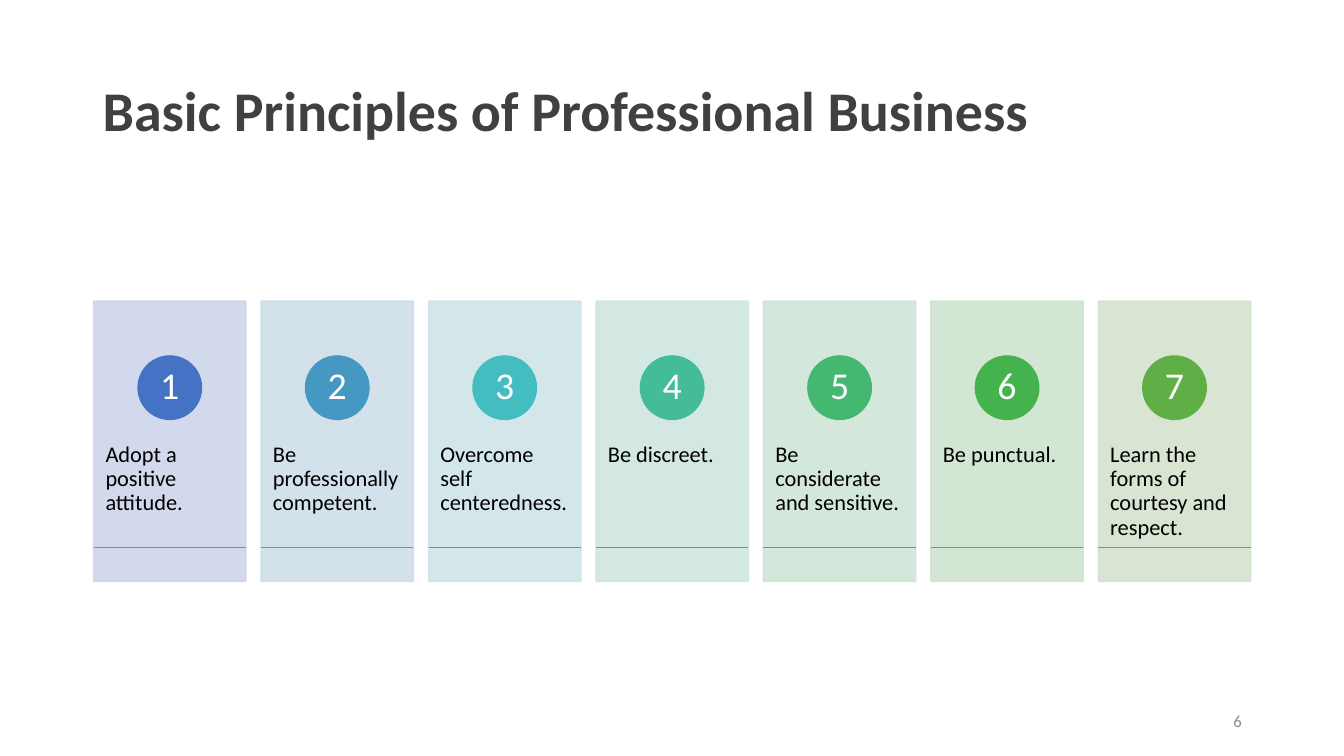
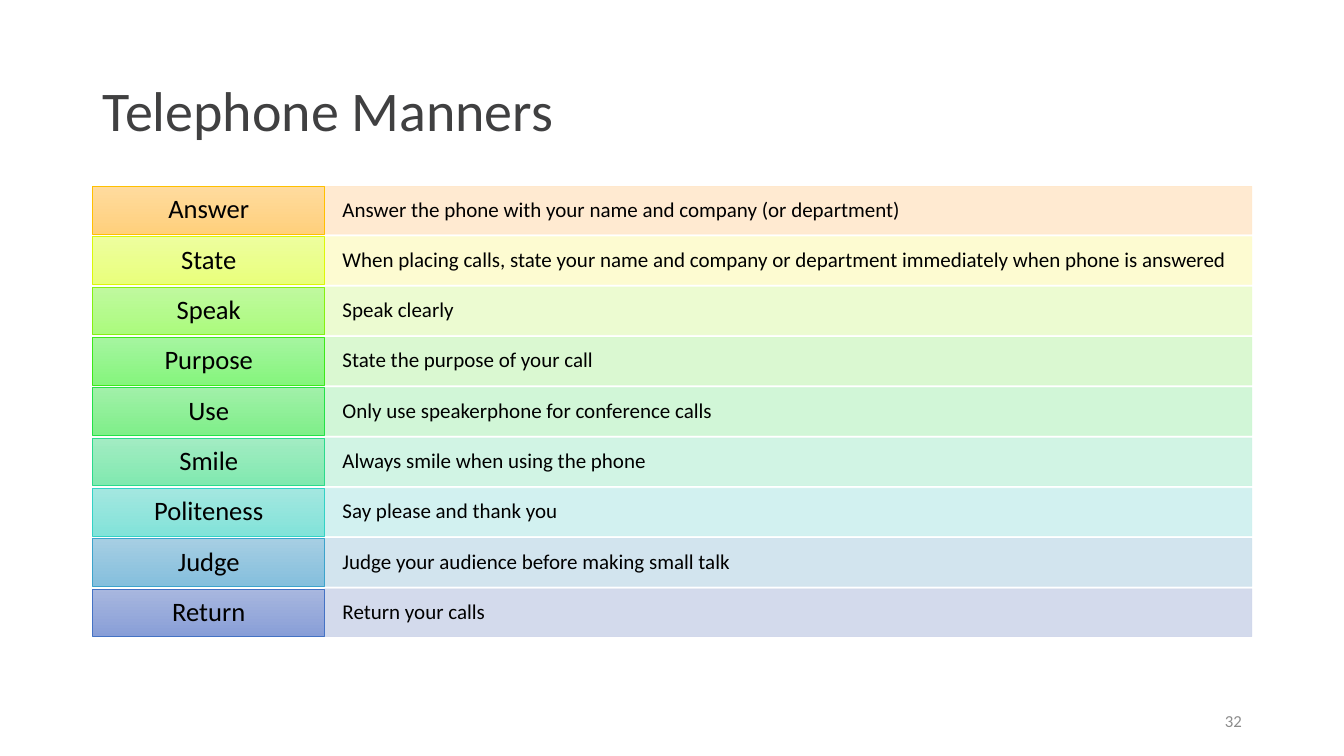
from dataclasses import dataclass

from lxml import etree
from pptx import Presentation
from pptx.dml.color import RGBColor
from pptx.enum.shapes import MSO_CONNECTOR, MSO_SHAPE
from pptx.enum.text import MSO_ANCHOR, PP_ALIGN
from pptx.oxml.ns import qn
from pptx.util import Cm, Pt

RECT, OVAL = MSO_SHAPE.RECTANGLE, MSO_SHAPE.OVAL
LINE = MSO_CONNECTOR.STRAIGHT
TOP, MID = MSO_ANCHOR.TOP, MSO_ANCHOR.MIDDLE
LEFT, MIDDLE, RIGHT = PP_ALIGN.LEFT, PP_ALIGN.CENTER, PP_ALIGN.RIGHT


@dataclass(frozen=True)
class Theme:
    face: str = "Calibri"
    title: str = "404041"
    faint: str = "8C8C8C"
    text: str = "000000"
    light: str = "FFFFFF"
    rule: str = "7F8F8F"
    head_size: int = 40
    foot_size: int = 12
    body_size: int = 16
    num_size: int = 27
    label_size: int = 19
    note_size: int = 15


THEME = Theme()

# Boxes in centimetres: left, top, width, height
HEAD = (2.34, 1.02, 29.21, 3.68)
FOOT = (23.93, 17.65, 7.62, 1.02)
PANELS = (2.36, 7.59, 29.16, 7.06)
ROWS = (2.34, 4.7, 29.21, 11.34)

# Text, panel colour, circle colour
RULES = [
    ("Adopt a positive attitude.", "CFD5EA", "4472C4"),
    ("Be professionally competent.", "CFDEE9", "4498C1"),
    ("Overcome self centeredness.", "CFE5E8", "43BDBF"),
    ("Be discreet.", "CFE6E0", "43BC97"),
    ("Be considerate and sensitive.", "CFE5D8", "44B770"),
    ("Be punctual.", "CFE4D0", "45B34D"),
    ("Learn the forms of courtesy and respect.", "D5E3CF", "60AF46"),
]

# Label, note, note colour, label colours from top to bottom, label edge
MANNERS = [
    ("Answer", "Answer the phone with your name and company (or department)",
     "FFE8CC", ("FFDB9E", "FFD07C"), "FFC000"),
    ("State", "When placing calls, state your name and company or department "
     "immediately when phone is answered",
     "FDFBCC", ("EDFE9E", "E9FF7C"), "DCF709"),
    ("Speak", "Speak clearly",
     "EAFBCC", ("C0F99F", "ABFB7D"), "86F011"),
    ("Purpose", "State the purpose of your call",
     "D7F8CC", ("A6F5A0", "85F57D"), "3CE81A"),
    ("Use", "Only use speakerphone for conference calls",
     "CCF6D3", ("A1F0A9", "7FEF89"), "23E148"),
    ("Smile", "Always smile when using the phone",
     "CDF3E2", ("A3ECC3", "80E9AF"), "2BDA8C"),
    ("Politeness", "Say please and thank you",
     "CEF0EF", ("A4E7E0", "82E3D9"), "33D2C5"),
    ("Judge", "Judge your audience before making small talk",
     "CEE2ED", ("A6CEE3", "85BFDD"), "3CA3CB"),
    ("Return", "Return your calls",
     "CFD6EA", ("A8B7DF", "889ED7"), "4472C4"),
]


def rgb(code):
    return RGBColor.from_string(code)


def place(box):
    return [Cm(size) for size in box]


def write(shape, text, size, color, align=LEFT, anchor=MID,
          pads=(0.25, 0.13), bold=False, space=0.9):
    """Fill a shape with one paragraph; pads are side and top/bottom."""
    frame = shape.text_frame
    frame.word_wrap = True
    frame.vertical_anchor = anchor
    frame.margin_left = frame.margin_right = Cm(pads[0])
    frame.margin_top = Cm(pads[1])
    frame.margin_bottom = Cm(0 if anchor == TOP else pads[1])
    para = frame.paragraphs[0]
    para.text = text
    para.alignment = align
    para.line_spacing = space
    font = para.font
    font.name, font.size, font.bold = THEME.face, Pt(size), bold
    font.color.rgb = rgb(color)


def draw(slide, kind, box, fill, edge, width):
    """Add a shape with a flat fill, or a gradient for a pair of colours."""
    shape = slide.shapes.add_shape(kind, *place(box))
    shape.shadow.inherit = False
    if isinstance(fill, tuple):
        shape.fill.gradient()
        shape.fill.gradient_angle = 270
        for stop, code in zip(shape.fill.gradient_stops, fill):
            stop.color.rgb = rgb(code)
    else:
        shape.fill.solid()
        shape.fill.fore_color.rgb = rgb(fill)
    shape.line.color.rgb = rgb(edge)
    shape.line.width = Pt(width)
    return shape


def tint(slide, box, color, width):
    """Add a rectangle whose fill and edge are 90% opaque."""
    shape = draw(slide, RECT, box, color, color, width)
    for node in shape._element.spPr.iter(qn("a:srgbClr")):
        etree.SubElement(node, qn("a:alpha")).set("val", "90000")
    return shape


def stroke(slide, left, top, width):
    line = slide.shapes.add_connector(
        LINE, Cm(left), Cm(top), Cm(left + width), Cm(top))
    line.line.color.rgb = rgb(THEME.rule)
    line.line.width = Pt(0.5)
    etree.SubElement(line._element.spPr, qn("a:effectLst"))


def base(deck, title, number, bold=False):
    """Start a slide with its title and slide number."""
    slide = deck.slides.add_slide(deck.slide_layouts[6])
    head = slide.shapes.add_textbox(*place(HEAD))
    write(head, title, THEME.head_size, THEME.title, bold=bold)
    foot = slide.shapes.add_textbox(*place(FOOT))
    write(foot, str(number), THEME.foot_size, THEME.faint, RIGHT, space=1)
    return slide


def panels(slide, box, items):
    """Numbered panels side by side."""
    left, top, width, height = box
    wide, disc = 3.84, 1.6
    step = (width - wide) / (len(items) - 1)
    for i, (text, pale, deep) in enumerate(items):
        x = left + i * step
        panel = tint(slide, (x, top, wide, height), pale, 1)
        write(panel, text, THEME.body_size, THEME.text,
              anchor=TOP, pads=(0.3, 3.58))
        spot = (x + (wide - disc) / 2, top + 1.38, disc, disc)
        badge = draw(slide, OVAL, spot, deep, deep, 1)
        write(badge, str(i + 1), THEME.num_size, THEME.light,
              MIDDLE, pads=(0, 0))
        stroke(slide, x, top + 6.2, wide)


def rows(slide, box, items):
    """Labels on the left, each with its note on the right."""
    left, top, width, height = box
    tall, side = 1.2, width / 5
    step = (height - tall) / (len(items) - 1)
    for i, (label, note, pale, shades, edge) in enumerate(items):
        y = top + i * step
        bar = tint(slide, (left + side, y, width - side, tall), pale, 0.5)
        write(bar, note, THEME.note_size, THEME.text, pads=(0.45, 0.3))
        tag = draw(slide, RECT, (left, y, side, tall), shades, edge, 0.5)
        write(tag, label, THEME.label_size, THEME.text, MIDDLE,
              pads=(0.3, 0.13))


def main():
    deck = Presentation()
    deck.slide_width, deck.slide_height = Cm(33.87), Cm(19.05)
    slide = base(deck, "Basic Principles of Professional Business", 6, True)
    panels(slide, PANELS, RULES)
    slide = base(deck, "Telephone Manners", 32)
    rows(slide, ROWS, MANNERS)
    deck.save("out.pptx")


if __name__ == "__main__":
    main()
